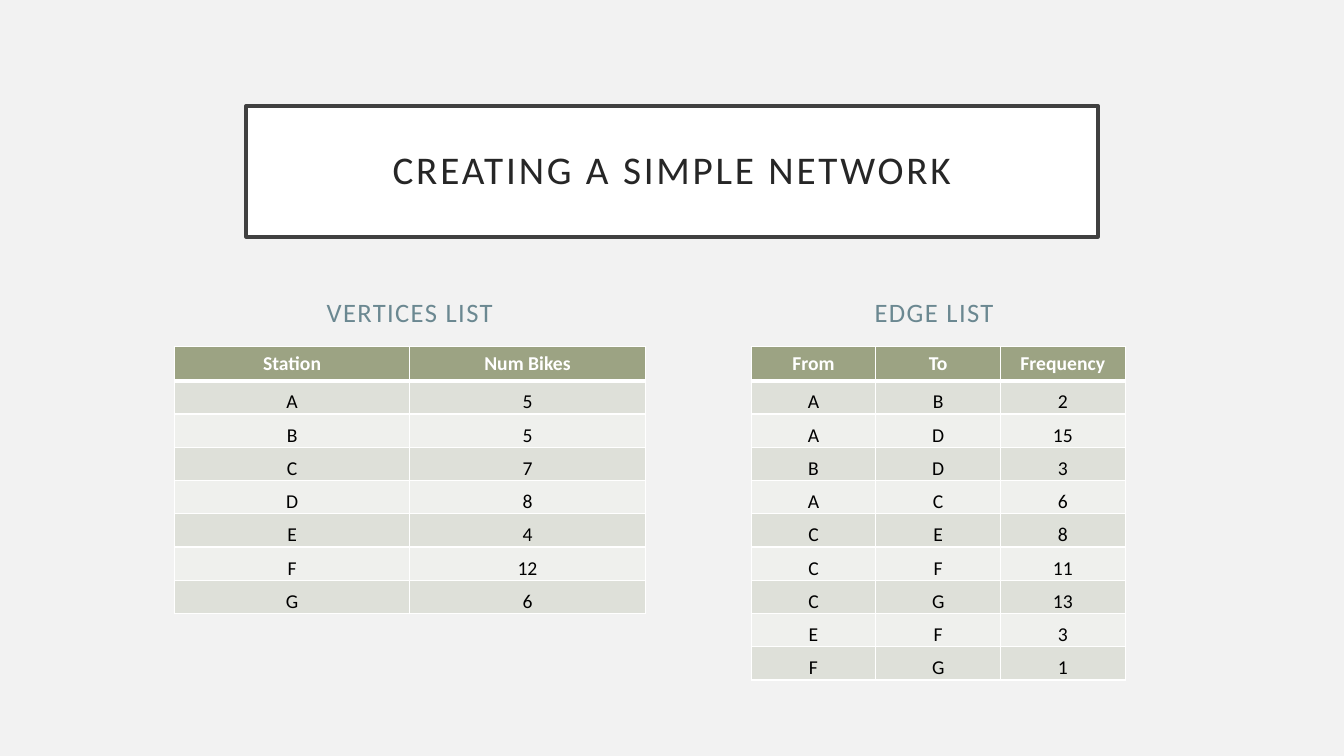
from lxml.etree import SubElement
from pptx import Presentation
from pptx.dml.color import RGBColor
from pptx.enum.text import MSO_ANCHOR, PP_ALIGN
from pptx.oxml.ns import qn
from pptx.util import Inches, Pt

HEAD, DARK, LIGHT = "9CA383", "DEE0D9", "EFF0ED"
ROW = 0.33

STATIONS = [
    ("Station", "Num Bikes"),
    ("A", 5), ("B", 5), ("C", 7), ("D", 8), ("E", 4), ("F", 12), ("G", 6),
]
EDGES = [
    ("From", "To", "Frequency"),
    ("A", "B", 2), ("A", "D", 15), ("B", "D", 3), ("A", "C", 6), ("C", "E", 8),
    ("C", "F", 11), ("C", "G", 13), ("E", "F", 3), ("F", "G", 1),
]


def paint(fmt, color):
    """Give a fill, or the fill of a font, one solid colour."""
    fmt.solid()
    fmt.fore_color.rgb = RGBColor.from_string(color)


def place(shape, box):
    shape.left, shape.top, shape.width, shape.height = map(Inches, box)


def inset(item, gap):
    item.margin_left = item.margin_right = Inches(gap)
    item.margin_top = item.margin_bottom = Inches(gap)


def write(frame, text, size, color, bold=False, space=0):
    """Set one centred line, with space in points between its letters."""
    frame.text = text
    line = frame.paragraphs[0]
    line.alignment = PP_ALIGN.CENTER
    font = line.font
    font.name, font.size, font.bold = "Calibri", Pt(size), bold
    paint(font.fill, color)
    if space:
        font._element.set("spc", str(space * 100))
    return line


def add_title(shape, box, text):
    place(shape, box)
    paint(shape.fill, "FFFFFF")
    paint(shape.line.fill, "404040")
    shape.line.width = Pt(2.5)
    frame = shape.text_frame
    frame.vertical_anchor = MSO_ANCHOR.MIDDLE
    inset(frame, 0.2)
    write(frame, text, 28, "262626", space=2).line_spacing = 0.9


def add_label(shape, box, text):
    place(shape, box)
    frame = shape.text_frame
    frame.vertical_anchor = MSO_ANCHOR.BOTTOM
    write(frame, text, 19, "6B8891", space=1).space_before = Pt(10)


def edge(cell, base):
    """Draw white borders round a cell, the lower one base points wide."""
    props = cell._tc.get_or_add_tcPr()
    for side, width in (("L", 1), ("R", 1), ("T", 1), ("B", base)):
        line = SubElement(props, qn("a:ln" + side), w=str(Pt(width)))
        fill = SubElement(line, qn("a:solidFill"))
        SubElement(fill, qn("a:srgbClr"), val="FFFFFF")


def add_grid(slide, left, top, width, rows):
    box = map(Inches, (left, top, width, ROW * len(rows)))
    table = slide.shapes.add_table(len(rows), len(rows[0]), *box).table
    for r, row in enumerate(rows):
        head = r == 0
        for c, value in enumerate(row):
            cell = table.cell(r, c)
            edge(cell, 3 if head else 1)
            paint(cell.fill, HEAD if head else DARK if r % 2 else LIGHT)
            if not head:
                inset(cell, 0)
                cell.vertical_anchor = MSO_ANCHOR.BOTTOM
            color = "FFFFFF" if head else "000000"
            write(cell.text_frame, str(value), 14, color, bold=head)


def main():
    deck = Presentation()
    deck.slide_width, deck.slide_height = Inches(13.33), Inches(7.5)
    slide = deck.slides.add_slide(deck.slide_layouts[4])
    paint(slide.background.fill, "F2F2F2")
    title, left, spare, right, extra = slide.placeholders
    for shape in (spare, extra):
        shape.element.getparent().remove(shape.element)

    add_title(title, (2.44, 1.05, 8.45, 1.3), "CREATING A SIMPLE NETWORK")
    add_label(left, (1.73, 2.53, 4.67, 0.77), "VERTICES LIST")
    add_label(right, (6.93, 2.53, 4.67, 0.77), "EDGE LIST")
    add_grid(slide, 1.73, 3.44, 4.67, STATIONS)
    add_grid(slide, 7.45, 3.44, 3.71, EDGES)
    deck.save("out.pptx")


if __name__ == "__main__":
    main()
